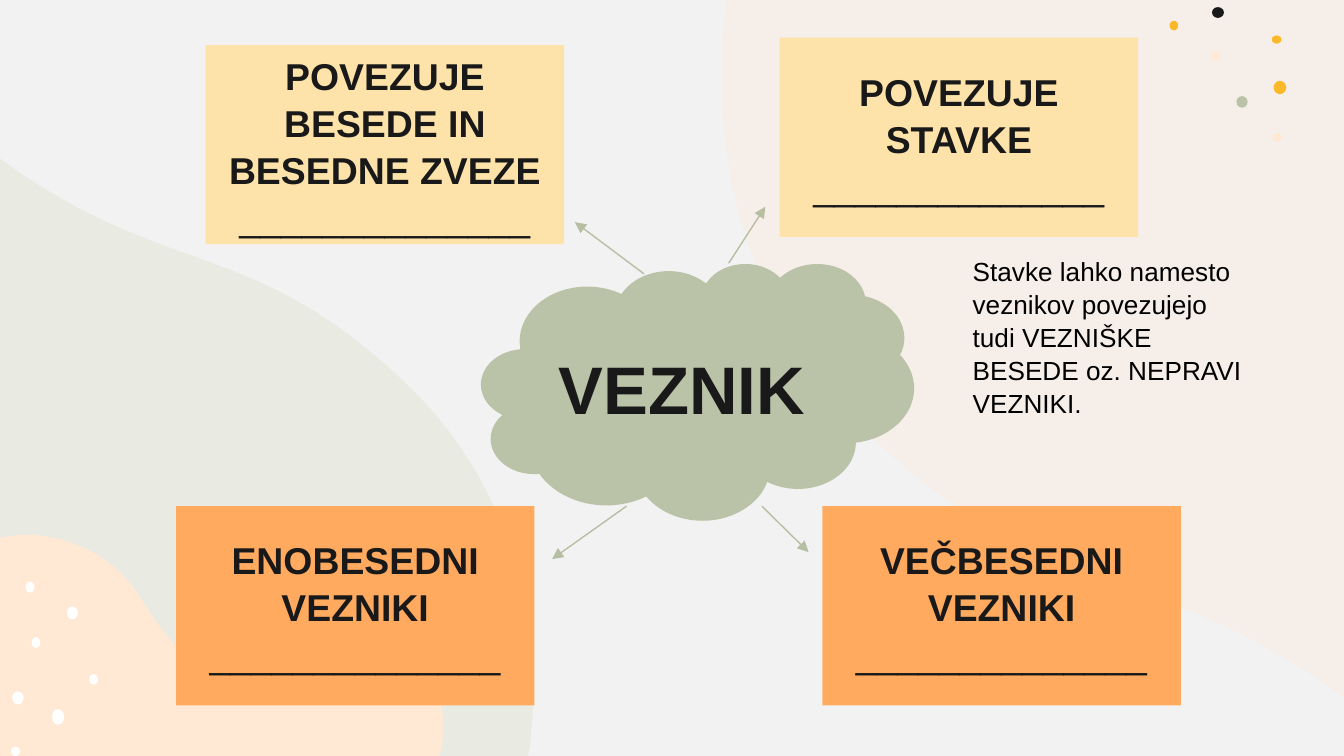
"""Build a mind-map slide about conjunctions."""
import pptx
import pptx.dml.color
import pptx.enum.shapes
import pptx.enum.text
import pptx.oxml.ns
import pptx.util
from lxml import etree

Pt = pptx.util.Pt
RGBColor = pptx.dml.color.RGBColor
Shape = pptx.enum.shapes.MSO_SHAPE
Align = pptx.enum.text.PP_ALIGN
qn = pptx.oxml.ns.qn

GREY = RGBColor(0xF2, 0xF2, 0xF2)
PEACH = RGBColor(0xFF, 0xE8, 0xD4)
MIST = RGBColor(0xCD, 0xD7, 0xB6)
SAGE = RGBColor(0xBA, 0xC2, 0xA7)
ARROW = RGBColor(0xB6, 0xBE, 0xA3)
ORANGE = RGBColor(0xFF, 0xAA, 0x5F)
CREAM = RGBColor(0xFD, 0xE3, 0xA9)
YELLOW = RGBColor(0xFB, 0xB9, 0x29)
WHITE = RGBColor(0xFF, 0xFF, 0xFF)
INK = RGBColor(0x19, 0x19, 0x19)
BLACK = RGBColor(0, 0, 0)

CARD_WIDTH, CARD_HEIGHT = 192, 106.7
BLANK_LINE = "_" * 14
CURVE_STEPS = 24

WAVES = [
    (PEACH, 32, (386.6, 41), [
        [(386.6, 89.3), (398.2, 169.2), (466.6, 234)],
        [(563.8, 326.2), (614.9, 297.4), (720, 373.7)],
        [(720, 0)], [(389.5, 0)],
        [(389.5, 0), (386.6, 15.8), (386.6, 41)]]),
    (MIST, 24, (285.8, 369.4), [
        [(285.8, 328.3), (275, 259.9), (216.7, 204.5)],
        [(133.9, 126), (90, 150.5), (0, 85)],
        [(0, 405)], [(283, 405)],
        [(283, 405), (285.8, 391), (285.8, 369.4)]]),
    (PEACH, 100, (235.4, 405), [
        [(239.8, 389.5), (238.3, 367.9), (222.5, 356.4)],
        [(216, 352.1), (208.1, 350.6), (200.2, 350.6)],
        [(182.2, 350.6), (160.6, 358.6), (139.7, 360)],
        [(136.8, 360.7), (133.9, 360.7), (131, 360.7)],
        [(106.6, 360.7), (92.9, 349.2), (74.9, 319.7)],
        [(61.9, 298.8), (38.2, 286.6), (14.4, 286.6)],
        [(9, 286.6), (4, 287), (0, 288)],
        [(0, 405)]]),
]
DOTS = [
    (WHITE, 16.1, 314.5, 5, 5.8), (WHITE, 38.8, 328.4, 6, 6.8),
    (WHITE, 50.1, 364, 4.8, 5.6), (WHITE, 31.1, 384.1, 6.6, 8.4),
    (WHITE, 19.3, 344.2, 4.6, 5.8), (WHITE, 9.6, 373.9, 6.2, 7),
    (WHITE, 8.3, 402.5, 5, 5), (YELLOW, 628.9, 13.7, 4.6, 5.2),
    (INK, 652.5, 6.7, 6.4, 5.8), (YELLOW, 683.9, 21.2, 5.2, 4.4),
    (YELLOW, 685.7, 46.9, 6.8, 7.2), (PEACH, 651.2, 30, 5, 4.8),
    (SAGE, 665.4, 54.6, 6, 6.2), (PEACH, 684.4, 73.7, 5, 4.8),
]
CARDS = [
    (440.6, 271.2, ORANGE, ["VEČBESEDNI", "VEZNIKI"]),
    (94.3, 271.2, ORANGE, ["ENOBESEDNI", "VEZNIKI"]),
    (110.2, 24.2, CREAM, ["POVEZUJE BESEDE IN BESEDNE ZVEZE"]),
    (417.7, 20.2, CREAM, ["POVEZUJE STAVKE"]),
]
ARROWS = [
    (390.4, 141, 410, 110.8), (345, 146.7, 308, 119),
    (335.6, 271.2, 295.8, 299.5), (408.2, 271.2, 433.2, 295.8),
]


def bezier(start, first, second, end):
    """Return points along a cubic curve, without its start."""
    points = []
    for step in range(1, CURVE_STEPS + 1):
        t = step / CURVE_STEPS
        weights = ((1 - t) ** 3, 3 * t * (1 - t) ** 2, 3 * t * t * (1 - t), t ** 3)
        corners = (start, first, second, end)
        points.append(tuple(sum(w * c[axis] for w, c in zip(weights, corners))
                            for axis in (0, 1)))
    return points


def write(para, text, *, size, color=INK, bold=False, align=Align.CENTER, font="Arial"):
    """Fill a paragraph with one formatted span."""
    para.alignment = align
    para.line_spacing = 1.05
    span = para.add_run()
    span.text = text
    span.font.name = font
    span.font.size = Pt(size)
    span.font.bold = bold
    span.font.color.rgb = color


class MindMap:
    """Draw the elements of one page in a shared style."""

    def __init__(self, page):
        self.page = page
        page.background.fill.solid()
        page.background.fill.fore_color.rgb = GREY

    def paint(self, shape, color, opacity=100):
        shape.shadow.inherit = False
        shape.fill.solid()
        shape.fill.fore_color.rgb = color
        shape.line.fill.background()
        if opacity < 100:
            tint = shape._element.spPr.find(".//" + qn("a:srgbClr"))
            etree.SubElement(tint, qn("a:alpha"), val=str(opacity * 1000))

    def wave(self, color, opacity, start, segments):
        points = [start]
        for segment in segments:
            points += bezier(points[-1], *segment) if len(segment) == 3 else segment
        outline = [(Pt(x), Pt(y)) for x, y in points]
        builder = self.page.shapes.build_freeform(*outline[0])
        builder.add_line_segments(outline[1:], close=True)
        self.paint(builder.convert_to_shape(), color, opacity)

    def shape(self, kind, left, top, width, height, color):
        shape = self.page.shapes.add_shape(kind, Pt(left), Pt(top), Pt(width), Pt(height))
        self.paint(shape, color)
        return shape

    def dot(self, color, x, y, width, height):
        self.shape(Shape.OVAL, x - width / 2, y - height / 2, width, height, color)

    def cloud(self, left, top, width, height, text):
        box = self.shape(Shape.CLOUD, left, top, width, height, SAGE)
        box.text_frame.vertical_anchor = pptx.enum.text.MSO_ANCHOR.MIDDLE
        write(box.text_frame.paragraphs[0], text, size=36, bold=True)

    def card(self, left, top, color, lines):
        box = self.shape(Shape.RECTANGLE, left, top, CARD_WIDTH, CARD_HEIGHT, color)
        frame = box.text_frame
        frame.vertical_anchor = pptx.enum.text.MSO_ANCHOR.MIDDLE
        for index, line in enumerate(lines + [BLANK_LINE]):
            para = frame.add_paragraph() if index else frame.paragraphs[0]
            write(para, line, size=20, bold=line != BLANK_LINE)

    def arrow(self, *ends):
        arrow = self.page.shapes.add_connector(
            pptx.enum.shapes.MSO_CONNECTOR.STRAIGHT, *map(Pt, ends))
        arrow.line.color.rgb = ARROW
        arrow.line.width = Pt(0.75)
        properties = arrow._element.spPr
        etree.SubElement(properties.find(qn("a:ln")), qn("a:tailEnd"), type="triangle")
        etree.SubElement(properties, qn("a:effectLst"))

    def note(self, left, top, width, height, text):
        box = self.page.shapes.add_textbox(Pt(left), Pt(top), Pt(width), Pt(height))
        box.text_frame.word_wrap = True
        write(box.text_frame.paragraphs[0], text, size=14, color=BLACK, align=Align.LEFT)


def main():
    """Assemble and save the deck."""
    deck = pptx.Presentation()
    deck.slide_width, deck.slide_height = Pt(720), Pt(405)
    mind_map = MindMap(deck.slides.add_slide(deck.slide_layouts[6]))
    for wave in WAVES:
        mind_map.wave(*wave)
    for dot in DOTS:
        mind_map.dot(*dot)
    mind_map.cloud(257.8, 141, 231.8, 137.5, "VEZNIK")
    for card in CARDS:
        mind_map.card(*card)
    for arrow in ARROWS:
        mind_map.arrow(*arrow)
    mind_map.note(514, 132.5, 165.6, 74.9,
                  "Stavke lahko namesto veznikov povezujejo tudi VEZNIŠKE BESEDE "
                  "oz. NEPRAVI VEZNIKI.")
    deck.save("out.pptx")


if __name__ == "__main__":
    main()
